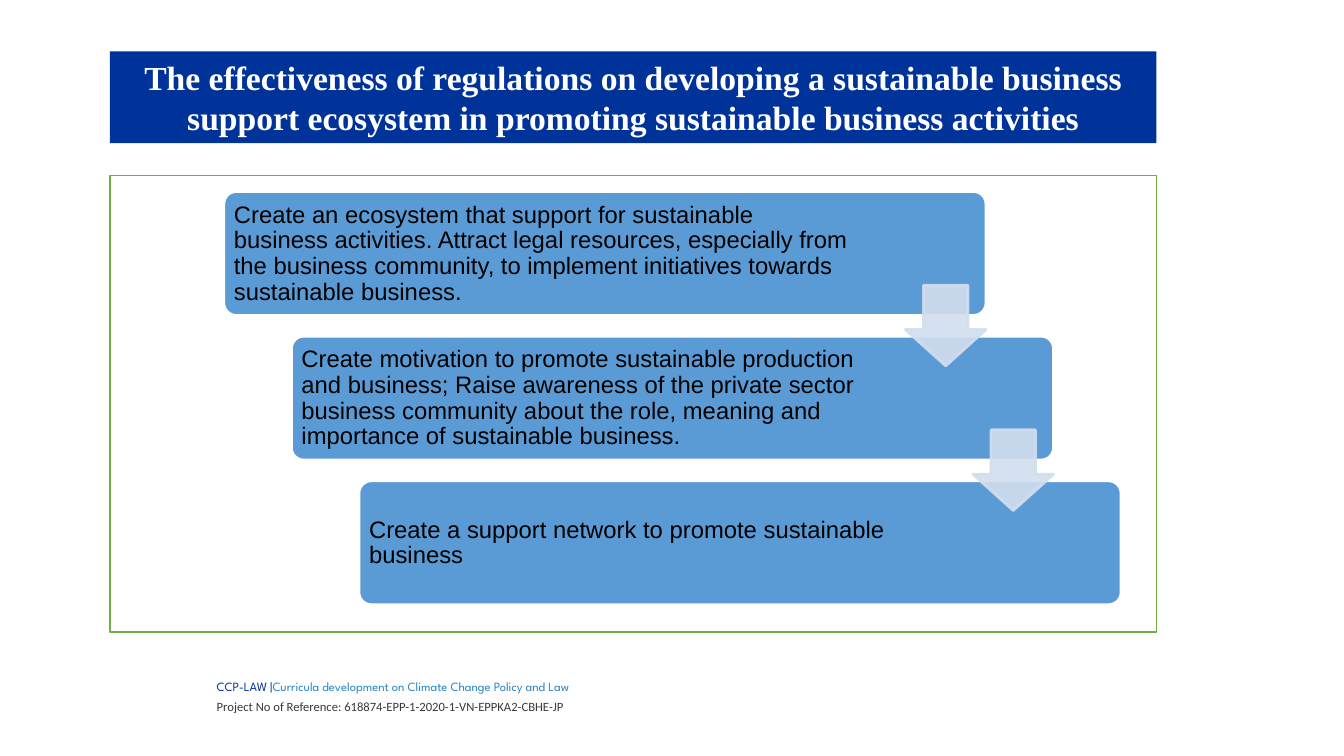
from dataclasses import dataclass

import lxml.etree
import pptx
import pptx.dml.color
import pptx.enum.shapes
import pptx.enum.text
import pptx.oxml.ns
import pptx.util

Inches = pptx.util.Inches
RGBColor = pptx.dml.color.RGBColor
Shapes = pptx.enum.shapes.MSO_SHAPE
Align = pptx.enum.text.PP_ALIGN
Anchor = pptx.enum.text.MSO_ANCHOR

NAVY = RGBColor(0x00, 0x33, 0x99)
SKY = RGBColor(0x26, 0x83, 0xC6)
STEP_BLUE = RGBColor(0x5B, 0x9B, 0xD5)
ARROW_BLUE = RGBColor(0xD2, 0xDE, 0xEF)
GREEN = RGBColor(0x70, 0xAD, 0x47)
CHARCOAL = RGBColor(0x3B, 0x38, 0x38)
WHITE = RGBColor(0xFF, 0xFF, 0xFF)
BLACK = RGBColor(0x00, 0x00, 0x00)

PANEL_LEFT, PANEL_WIDTH = 1.09, 10.38
STEP_LEFT, STEP_TOP, STEP_WIDTH, STEP_HEIGHT = 2.22, 1.9, 7.56, 1.23
STEP_RIGHT, STEP_DOWN = 0.67, 1.435
ARROW_LEFT, ARROW_TOP, ARROW_SIZE = 8.98, 2.83, 0.8


@dataclass
class Step:
    text: str
    text_width: float


STEPS = [
    Step("Create an ecosystem that support for sustainable business activities. "
         "Attract legal resources, especially from the business community, "
         "to implement initiatives towards sustainable business.", 6.23),
    Step("Create motivation to promote sustainable production and business; "
         "Raise awareness of the private sector business community about the role, "
         "meaning and importance of sustainable business.", 6.02),
    Step("Create a support network to promote sustainable business", 6.02),
]


def write(paragraph, text: str, *, font: str, size: float, color: RGBColor,
          bold: bool = False, align=Align.LEFT, spacing: float = 1.0) -> None:
    """Add one formatted run to a paragraph."""
    paragraph.alignment = align
    paragraph.line_spacing = spacing
    run = paragraph.add_run()
    run.text = text
    run.font.name = font
    run.font.size = pptx.util.Pt(size)
    run.font.bold = bold
    run.font.color.rgb = color


def add_block(slide, kind, left: float, top: float, width: float, height: float,
              *, fill: RGBColor, line: RGBColor, line_width: float,
              adjustments: tuple = ()):
    """Draw a filled and outlined preset shape."""
    block = slide.shapes.add_shape(kind, Inches(left), Inches(top),
                                   Inches(width), Inches(height))
    block.shadow.inherit = False
    block.fill.solid()
    block.fill.fore_color.rgb = fill
    block.line.color.rgb = line
    block.line.width = pptx.util.Pt(line_width)
    for index, value in enumerate(adjustments):
        block.adjustments[index] = value
    return block


def add_title(slide) -> None:
    title = slide.shapes.title
    title.left, title.top = Inches(PANEL_LEFT), Inches(0.51)
    title.width, title.height = Inches(PANEL_WIDTH), Inches(0.91)
    title.fill.solid()
    title.fill.fore_color.rgb = NAVY
    frame = title.text_frame
    frame.auto_size = pptx.enum.text.MSO_AUTO_SIZE.NONE
    frame.vertical_anchor = Anchor.TOP
    write(frame.paragraphs[0],
          "The effectiveness of regulations on developing a sustainable business "
          "support ecosystem in promoting sustainable business activities",
          font="Times New Roman", size=24, color=WHITE, bold=True, align=Align.CENTER)


def add_step(slide, index: int, step: Step) -> None:
    left = STEP_LEFT + index * STEP_RIGHT
    top = STEP_TOP + index * STEP_DOWN
    add_block(slide, Shapes.ROUNDED_RECTANGLE, left, top, STEP_WIDTH, STEP_HEIGHT,
              fill=STEP_BLUE, line=WHITE, line_width=2, adjustments=(0.1,))
    label = slide.shapes.add_textbox(Inches(left + 0.03), Inches(top + 0.04),
                                     Inches(step.text_width), Inches(1.16))
    frame = label.text_frame
    frame.word_wrap = True
    frame.vertical_anchor = Anchor.MIDDLE
    frame.margin_left = frame.margin_right = Inches(0.07)
    frame.margin_top = frame.margin_bottom = Inches(0.07)
    write(frame.paragraphs[0], step.text, font="Arial", size=17, color=BLACK, spacing=0.9)


def add_arrow(slide, index: int) -> None:
    arrow = add_block(slide, Shapes.DOWN_ARROW, ARROW_LEFT + index * STEP_RIGHT,
                      ARROW_TOP + index * STEP_DOWN, ARROW_SIZE, ARROW_SIZE,
                      fill=ARROW_BLUE, line=ARROW_BLUE, line_width=2,
                      adjustments=(0.55, 0.45))
    # Fill and outline are both 90% opaque
    qn = pptx.oxml.ns.qn
    for color in arrow.element.spPr.iter(qn("a:srgbClr")):
        lxml.etree.SubElement(color, qn("a:alpha"), val="90000")


def add_project_footer(slide) -> None:
    footer = slide.shapes.add_table(1, 2, Inches(1.3), Inches(6.67),
                                    Inches(4.52), Inches(0.52)).table
    footer.first_row = footer.horz_banding = False
    for column, width in zip(footer.columns, (0.78, 3.74)):
        column.width = Inches(width)
    for cell in footer.rows[0].cells:
        cell.fill.background()
        cell.vertical_anchor = Anchor.MIDDLE
        cell.margin_left = cell.margin_right = Inches(0.07)
        cell.margin_top = cell.margin_bottom = 0
    frame = footer.cell(0, 1).text_frame
    programme = frame.paragraphs[0]
    write(programme, "CCP-LAW |", font="League Spartan", size=9, color=NAVY, spacing=1.07)
    write(programme, "Curricula development on Climate Change Policy and Law",
          font="League Spartan", size=9, color=SKY, spacing=1.07)
    reference = frame.add_paragraph()
    reference.space_before = pptx.util.Pt(3)
    write(reference, "Project No of Reference: 618874-EPP-1-2020-1-VN-EPPKA2-CBHE-JP",
          font="Calibri", size=9, color=CHARCOAL, spacing=1.07)


def main() -> None:
    deck = pptx.Presentation()
    deck.slide_width, deck.slide_height = Inches(13.33), Inches(7.5)
    slide = deck.slides.add_slide(deck.slide_layouts.get_by_name("Title Only"))

    # Heading and project reference
    add_title(slide)
    add_project_footer(slide)

    # Framed staircase of steps
    add_block(slide, Shapes.RECTANGLE, PANEL_LEFT, 1.74, PANEL_WIDTH, 4.53,
              fill=WHITE, line=GREEN, line_width=1)
    for index, step in enumerate(STEPS):
        add_step(slide, index, step)

    # Arrows from each step to the next
    for index in range(len(STEPS) - 1):
        add_arrow(slide, index)

    deck.save("out.pptx")


if __name__ == "__main__":
    main()
